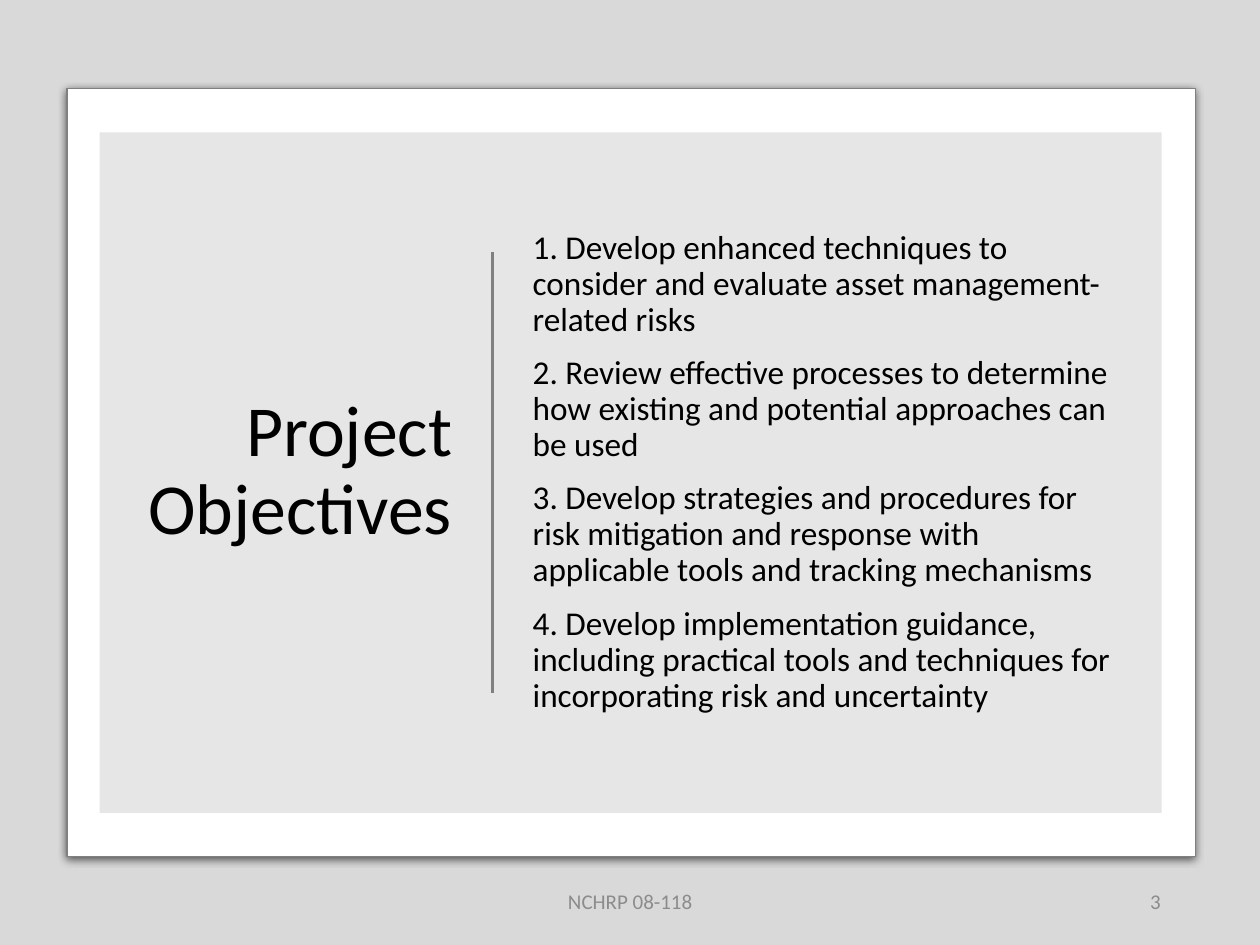
from lxml import etree
from pptx import Presentation
from pptx import util as u
from pptx.dml.color import RGBColor
from pptx.enum import shapes, text
from pptx.oxml.ns import qn

COLORS = {"black": "000000", "white": "FFFFFF", "panel": "E7E6E6",
          "rule": "808080", "footer": "8C8C8C"}
FONT = "Calibri"
OBJECTIVES = [
    "1. Develop enhanced techniques to consider and evaluate asset management-related risks",
    "2. Review effective processes to determine how existing and potential approaches can be used",
    "3. Develop strategies and procedures for risk mitigation and response with "
    "applicable tools and tracking mechanisms",
    "4. Develop implementation guidance, including practical tools and techniques "
    "for incorporating risk and uncertainty",
]


def rgb(name):
    return RGBColor.from_string(COLORS[name])


def lengths(values):
    return [u.Cm(v) for v in values]


def add_box(s, box, fill, kind=shapes.MSO_SHAPE.RECTANGLE, line=None):
    sp = s.shapes.add_shape(kind, *lengths(box))
    sp.shadow.inherit = False
    sp.fill.solid()
    sp.fill.fore_color.rgb = rgb(fill)
    if line:
        sp.line.color.rgb = rgb(line)
        sp.line.width = u.Pt(0.75)
    else:
        sp.line.fill.background()
    return sp


def set_alpha(color, percent):
    etree.SubElement(color, qn("a:alpha"), val=str(percent * 1000))


def add_shadow(sp):
    """Give the shape a soft shadow that falls straight down."""
    effects = sp._element.spPr.find(qn("a:effectLst"))
    shadow = etree.SubElement(
        effects, qn("a:outerShdw"), blurRad=str(u.Pt(4.5)), dist=str(u.Pt(1.5)),
        dir="5400000", algn="ctr", rotWithShape="0")
    set_alpha(etree.SubElement(shadow, qn("a:srgbClr"), val=COLORS["black"]), 63)


def add_rule(s, x, top, bottom):
    line = s.shapes.add_connector(shapes.MSO_CONNECTOR.STRAIGHT,
                                  *lengths((x, top, x, bottom)))
    line.line.color.rgb = rgb("rule")
    line.line.width = u.Pt(1.5)
    etree.SubElement(line._element.spPr, qn("a:effectLst"))


def add_text(s, box, paragraphs, size, color="black", **formats):
    """Add a middle-anchored text box; formats are paragraph attributes."""
    tf = s.shapes.add_textbox(*lengths(box)).text_frame
    tf.word_wrap = True
    tf.vertical_anchor = text.MSO_ANCHOR.MIDDLE
    for i, words in enumerate(paragraphs):
        p = tf.add_paragraph() if i else tf.paragraphs[0]
        for name, value in formats.items():
            setattr(p, name, value)
        r = p.add_run()
        r.text = words
        r.font.color.rgb = rgb(color)
        for name, value in {"name": FONT, "size": u.Pt(size)}.items():
            setattr(r.font, name, value)


def main():
    prs = Presentation()
    prs.slide_width, prs.slide_height = lengths((25.4, 19.05))
    s = prs.slides.add_slide(prs.slide_layouts[6])

    shade = add_box(s, (0, 0, 25.4, 19.05), "black")
    set_alpha(shade._element.spPr.find(".//" + qn("a:srgbClr")), 15)
    card = add_box(s, (1.35, 1.78, 22.75, 15.49), "white",
                   shapes.MSO_SHAPE.ROUNDED_RECTANGLE, "rule")
    card.adjustments[0] = 0
    add_shadow(card)
    add_box(s, (2.01, 2.67, 21.41, 13.72), "panel")

    add_text(s, (2.69, 3.81, 6.68, 11.43), ["Project Objectives"], 41,
             alignment=text.PP_ALIGN.RIGHT, line_spacing=0.9)
    add_rule(s, 9.93, 5.08, 13.97)
    add_text(s, (10.49, 3.81, 12.24, 11.43), OBJECTIVES, 19,
             line_spacing=0.9, space_before=u.Pt(10))

    footers = [(8.41, 8.59, "NCHRP 08-118", text.PP_ALIGN.CENTER),
               (17.93, 5.72, "3", text.PP_ALIGN.RIGHT)]
    for left, width, words, align in footers:
        add_text(s, (left, 17.65, width, 1.02), [words], 12, "footer",
                 alignment=align, space_after=u.Pt(6))

    prs.save("out.pptx")


if __name__ == "__main__":
    main()
